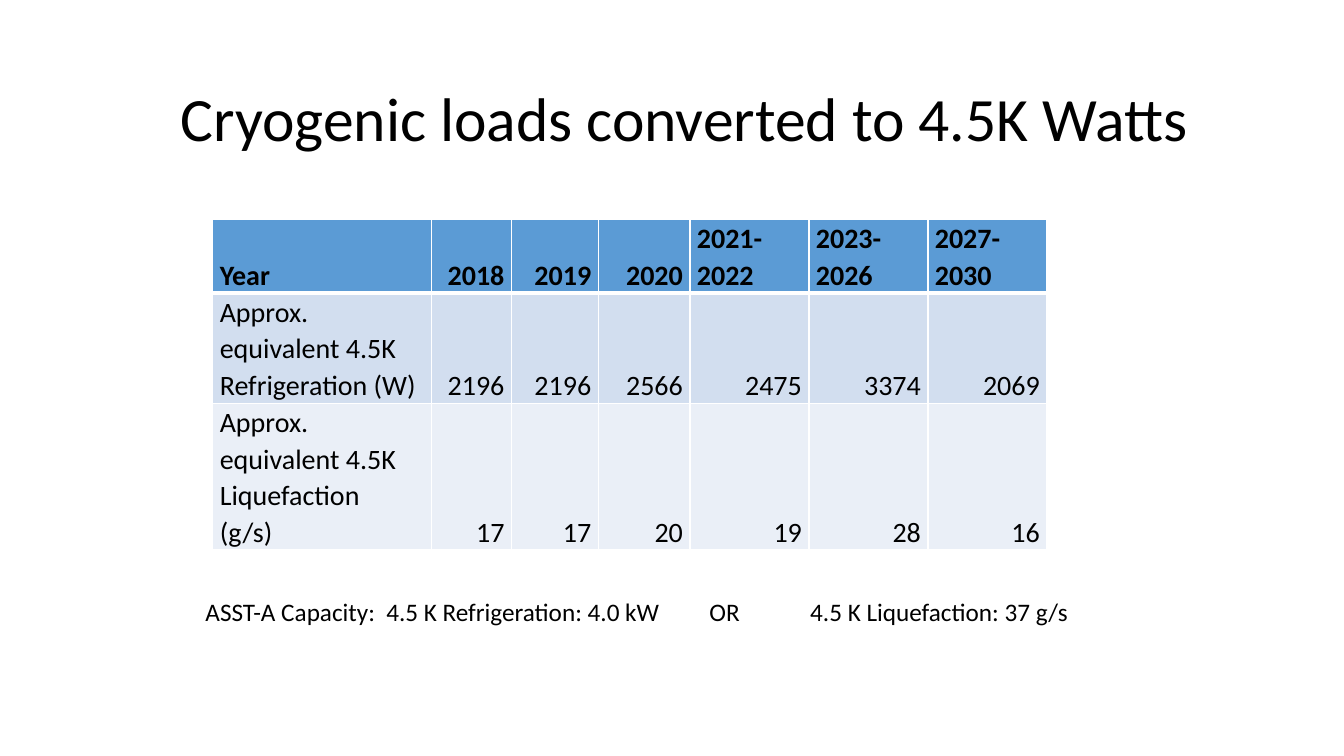
from lxml import etree
from pptx import Presentation
from pptx import util as u
from pptx.dml.color import RGBColor
from pptx.enum import text as t
from pptx.oxml import ns

Pt = u.Pt
FONT = "Calibri"
COLORS = {"ink": "000000", "line": "FFFFFF", "head": "5B9BD5",
          "odd": "D2DEEF", "even": "EAEFF7"}
ROWS = [
    ["Year", "2018", "2019", "2020", "2021-2022", "2023-2026", "2027-2030"],
    ["Approx. equivalent 4.5K Refrigeration (W)",
     "2196", "2196", "2566", "2475", "3374", "2069"],
    ["Approx. equivalent 4.5K Liquefaction  (g/s)",
     "17", "17", "20", "19", "28", "16"],
]
WIDTHS = [156.4, 57, 62, 65.5, 85, 85, 85]
LINES = [2, 3, 4]  # text lines in each row
PITCH = 26         # height of one line


def rgb(name):
    return RGBColor.from_string(COLORS[name])


def write(frame, words, size=20, bold=False, align="LEFT", space=1.07,
          anchor=None, tabs=()):
    """Put one formatted paragraph into a text frame."""
    frame.word_wrap = True
    if anchor:
        frame.vertical_anchor = anchor
    para = frame.paragraphs[0]
    para.alignment = getattr(t.PP_ALIGN, align)
    para.line_spacing = space
    run = para.add_run()
    run.text = words
    font = run.font
    font.name, font.size, font.bold = FONT, Pt(size), bold
    font.color.rgb = rgb("ink")
    if tabs:
        stops = etree.SubElement(para._p.get_or_add_pPr(), ns.qn("a:tabLst"))
        for stop in tabs:
            etree.SubElement(stops, ns.qn("a:tab"), pos=str(Pt(stop)), algn="l")


def edge(cell, top, base):
    """Draw the four cell borders; they must precede the fill."""
    props = cell._tc.get_or_add_tcPr()
    for i, (side, width) in enumerate(zip("LRTB", (1, 1, top, base))):
        line = etree.Element(ns.qn("a:ln" + side), w=str(Pt(width)))
        fill = etree.SubElement(line, ns.qn("a:solidFill"))
        etree.SubElement(fill, ns.qn("a:srgbClr"), val=COLORS["line"])
        props.insert(i, line)


def add_title(slide, words):
    title = slide.shapes.title
    title.left, title.top = Pt(121.7), Pt(34.6)
    title.width, title.height = Pt(828), Pt(104.4)
    title.text_frame.auto_size = t.MSO_AUTO_SIZE.NONE
    write(title.text_frame, words, size=44, space=0.9,
          anchor=t.MSO_ANCHOR.MIDDLE)


def add_loads(slide):
    table = slide.shapes.add_table(
        len(ROWS), len(WIDTHS), Pt(152), Pt(157),
        Pt(sum(WIDTHS)), Pt(PITCH * sum(LINES))).table
    for col, width in zip(table.columns, WIDTHS):
        col.width = Pt(width)
    for r, (row, fill) in enumerate(zip(ROWS, ("head", "odd", "even"))):
        table.rows[r].height = Pt(PITCH * LINES[r])
        for c, words in enumerate(row):
            cell = table.cell(r, c)
            cell.margin_left = cell.margin_right = Pt(5)
            cell.margin_top = cell.margin_bottom = 0
            cell.vertical_anchor = t.MSO_ANCHOR.BOTTOM
            cell.fill.solid()
            cell.fill.fore_color.rgb = rgb(fill)
            edge(cell, top=3 if r == 1 else 1, base=3 if r == 0 else 1)
            # Single numbers sit right, labels and year spans left
            align = "RIGHT" if words.isdigit() else "LEFT"
            write(cell.text_frame, words, bold=r == 0, align=align)


def add_note(slide, words):
    box = slide.shapes.add_textbox(Pt(67.7), Pt(411.8), Pt(820.8), Pt(40.3))
    write(box.text_frame, words, size=18, space=1.5, tabs=(72, 432, 504))


def main():
    deck = Presentation()
    deck.slide_width, deck.slide_height = Pt(960), Pt(540)
    slide = deck.slides.add_slide(deck.slide_layouts.get_by_name("Title Only"))
    add_title(slide, "Cryogenic loads converted to 4.5K Watts")
    add_loads(slide)
    add_note(slide, "\tASST-A Capacity:  4.5 K Refrigeration: 4.0 kW \tOR "
                    "\t4.5 K Liquefaction: 37 g/s")
    deck.save("out.pptx")


if __name__ == "__main__":
    main()
